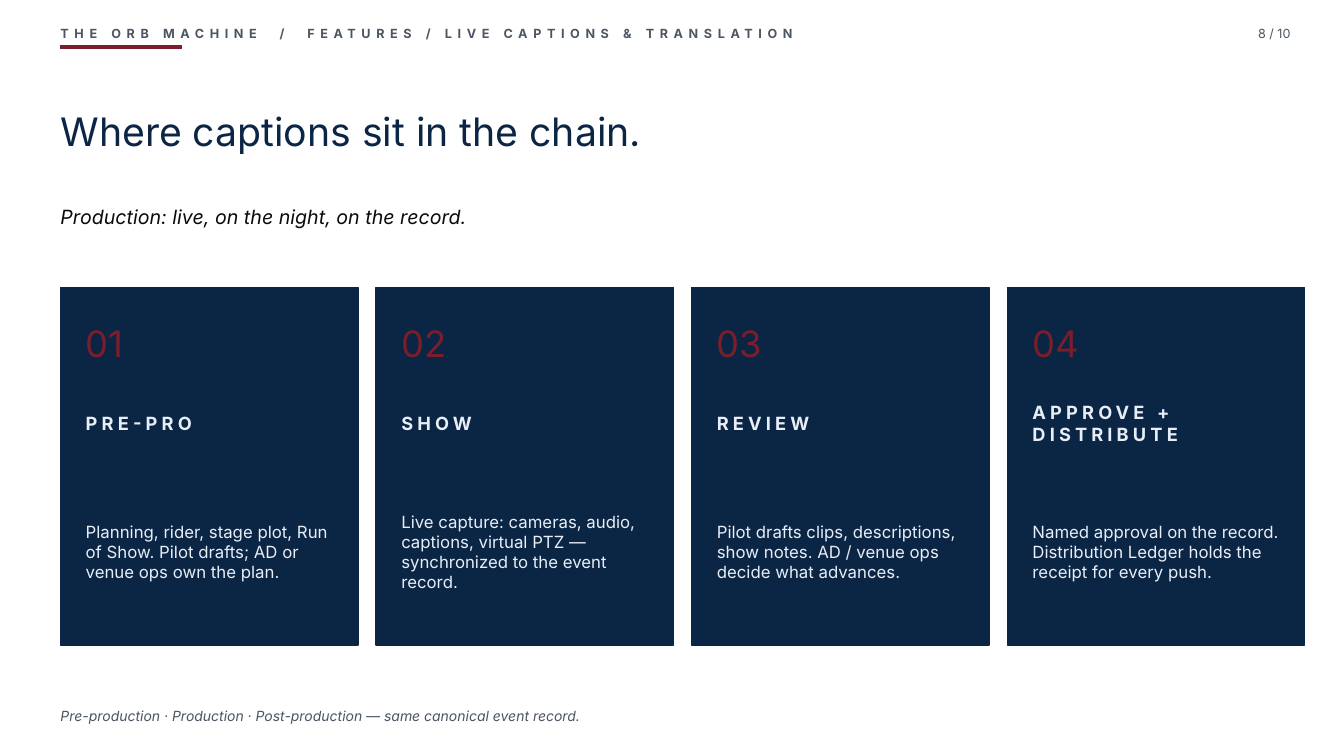
from pptx import Presentation
from pptx.dml.color import RGBColor
from pptx.enum.shapes import MSO_SHAPE
from pptx.enum.text import MSO_ANCHOR, PP_ALIGN
from pptx.util import Inches, Pt

# Content
HEAD = "THE ORB MACHINE  /  FEATURES / LIVE CAPTIONS & TRANSLATION"
PAGE = "8 / 10"
TITLE = "Where captions sit in the chain."
LEAD = "Production: live, on the night, on the record."
STAGES = [
    ("PRE-PRO", "Planning, rider, stage plot, Run of Show. "
     "Pilot drafts; AD or venue ops own the plan."),
    ("SHOW", "Live capture: cameras, audio, captions, virtual PTZ — "
     "synchronized to the event record."),
    ("REVIEW", "Pilot drafts clips, descriptions, show notes. "
     "AD / venue ops decide what advances."),
    ("APPROVE + DISTRIBUTE", "Named approval on the record. "
     "Distribution Ledger holds the receipt for every push."),
]
FOOT = "Pre-production · Production · Post-production — same canonical event record."

# Theme: colours and type styles
NAVY, RED, GREY, PALE, INK = (
    RGBColor.from_string(c)
    for c in ("0B2545", "7B1E2B", "4B5563", "E8EEF6", "0B0B0E"))
THEME = {
    "font": "Inter",
    "head": dict(size=Pt(9), color=GREY, bold=True, track=4),
    "page": dict(size=Pt(9), color=GREY, align=PP_ALIGN.RIGHT),
    "title": dict(size=Pt(28), color=NAVY),
    "lead": dict(size=Pt(14), color=INK, italic=True),
    "number": dict(size=Pt(26), color=RED),
    "stage": dict(size=Pt(13), color=PALE, bold=True, track=3),
    "body": dict(size=Pt(12), color=PALE),
    "foot": dict(size=Pt(10), color=GREY, italic=True),
}

# Layout in inches
LEFT, WIDE = 0.6, 12.1
CARD_TOP, CARD_W, CARD_H, GAP = 2.85, 2.95, 3.55, 0.18
PAD, TEXT_W = 0.25, 2.45

deck = Presentation()
deck.slide_width, deck.slide_height = Inches(13.33), Inches(7.5)
slide = deck.slides.add_slide(deck.slide_layouts[6])


def add_block(x, y, w, h, color):
    block = slide.shapes.add_shape(
        MSO_SHAPE.RECTANGLE, *map(Inches, (x, y, w, h)))
    block.shadow.inherit = False
    block.fill.solid()
    block.fill.fore_color.rgb = color
    block.line.color.rgb = color
    block.line.width = Pt(1)


def add_text(x, y, w, h, text, style):
    form = dict(THEME[style], name=THEME["font"])
    color, track = form.pop("color"), form.pop("track", 0)
    align = form.pop("align", PP_ALIGN.LEFT)
    frame = slide.shapes.add_textbox(*map(Inches, (x, y, w, h))).text_frame
    frame.word_wrap = True
    frame.vertical_anchor = MSO_ANCHOR.MIDDLE
    for side in ("left", "top", "right", "bottom"):
        setattr(frame, f"margin_{side}", 0)
    para = frame.paragraphs[0]
    para.alignment = align
    run = para.add_run()
    run.text = text
    for key, value in form.items():
        setattr(run.font, key, value)
    run.font.color.rgb = color
    if track:
        run._r.get_or_add_rPr().set("spc", str(track * 100))


# Header
add_block(LEFT, 0.45, 1.2, 0.03, RED)
add_text(LEFT, 0.18, 9, 0.3, HEAD, "head")
add_text(12.2, 0.18, 0.6, 0.3, PAGE, "page")
add_text(LEFT, 0.85, WIDE, 0.9, TITLE, "title")
add_text(LEFT, 1.85, WIDE, 0.6, LEAD, "lead")

# Stage cards
for i, (name, body) in enumerate(STAGES):
    x = LEFT + i * (CARD_W + GAP)
    add_block(x, CARD_TOP, CARD_W, CARD_H, NAVY)
    add_text(x + PAD, 3.15, TEXT_W, 0.5, f"{i + 1:02}", "number")
    add_text(x + PAD, 3.8, TEXT_W, 0.8, name, "stage")
    add_text(x + PAD, 4.7, TEXT_W, 1.55, body, "body")

# Footer
add_text(LEFT, 6.95, WIDE, 0.3, FOOT, "foot")

deck.save("out.pptx")
